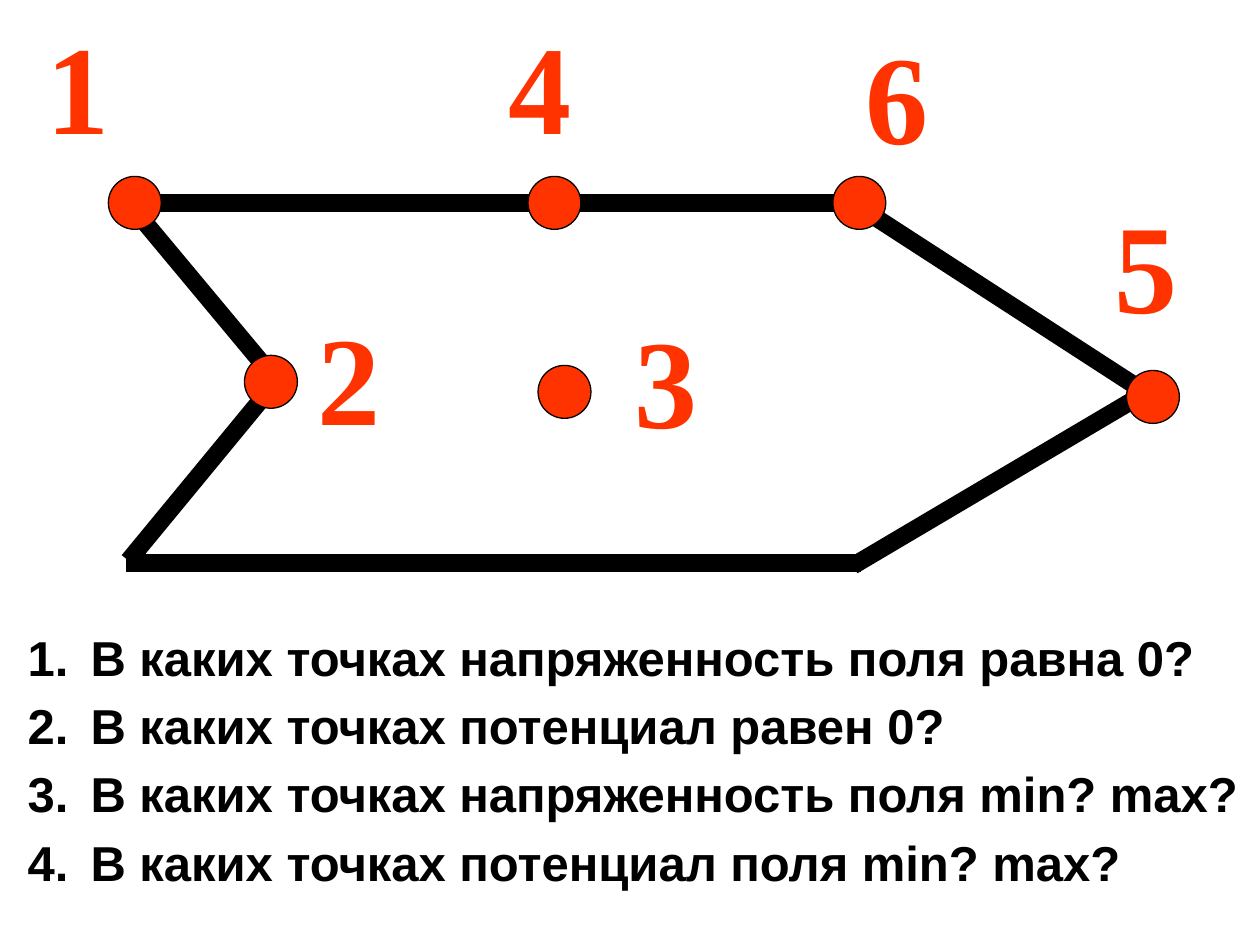
from lxml.etree import SubElement
from pptx import Presentation
from pptx.dml.color import RGBColor
from pptx.enum.shapes import MSO_CONNECTOR, MSO_SHAPE
from pptx.oxml.ns import qn
from pptx.util import Inches, Pt

RED = RGBColor(0xFF, 0x33, 0x00)
BLACK = RGBColor(0x00, 0x00, 0x00)

DOT_SIZE = 0.42
LABEL_SIZE = (1, 1.31)
LABEL_FONT = {"name": "Times New Roman", "size": Pt(72), "bold": True}
QUESTION_FONT = {"name": "Arial", "size": Pt(28), "bold": True}
QUESTION_BOX = (0.12, 4.93, 9.88, 2.72)
QUESTION_INDENT = 0.5
QUESTION_GAP = 5.4

# Start and end of each side of the conductor
SIDES = [
    ((1.02, 1.61), (6.86, 1.61)),
    ((1, 4.47), (6.83, 4.47)),
    ((6.77, 1.61), (9.1, 3.12)),
    ((1.02, 1.61), (2.27, 3.11)),
    ((1.02, 4.45), (2.19, 3.03)),
    ((6.77, 4.49), (9.02, 3.16)),
]

# Number, left top of the dot, left top of the label
POINTS = [
    ("1", (0.86, 1.4), (0.27, 0.02)),
    ("2", (1.94, 2.82), (2.42, 2.33)),
    ("3", (4.27, 2.9), (4.94, 2.35)),
    ("4", (4.19, 1.4), (3.94, 0.02)),
    ("5", (8.94, 2.94), (8.75, 1.44)),
    ("6", (6.61, 1.4), (6.77, 0.1)),
]

QUESTIONS = [
    "В каких точках напряженность поля равна 0?",
    "В каких точках потенциал равен 0?",
    "В каких точках напряженность поля min? max?",
    "В каких точках потенциал поля min? max?",
]


def inches(*values):
    return [Inches(value) for value in values]


def format_font(font, values, color):
    for name, value in values.items():
        setattr(font, name, value)
    font.color.rgb = color


def add_side(slide, start, end):
    side = slide.shapes.add_connector(MSO_CONNECTOR.STRAIGHT, *inches(*start, *end))
    side.line.color.rgb = BLACK
    side.line.width = Pt(10)
    SubElement(side._element.spPr, qn("a:effectLst"))


def add_dot(slide, position):
    dot = slide.shapes.add_shape(
        MSO_SHAPE.OVAL, *inches(*position, DOT_SIZE, DOT_SIZE))
    dot.shadow.inherit = False
    dot.fill.solid()
    dot.fill.fore_color.rgb = RED
    dot.line.color.rgb = BLACK
    dot.line.width = Pt(0.75)


def add_text_frame(slide, box):
    frame = slide.shapes.add_textbox(*inches(*box)).text_frame
    frame.word_wrap = True
    return frame


def add_label(slide, number, position):
    paragraph = add_text_frame(slide, (*position, *LABEL_SIZE)).paragraphs[0]
    paragraph.text = number
    format_font(paragraph.runs[0].font, LABEL_FONT, RED)


def add_questions(slide):
    frame = add_text_frame(slide, QUESTION_BOX)
    for index, question in enumerate(QUESTIONS):
        paragraph = frame.add_paragraph() if index else frame.paragraphs[0]
        paragraph.text = question
        paragraph.space_before = Pt(QUESTION_GAP if index else 0)
        properties = paragraph._p.get_or_add_pPr()
        properties.set("marL", str(Inches(QUESTION_INDENT)))
        properties.set("indent", str(-Inches(QUESTION_INDENT)))
        SubElement(properties, qn("a:buFont"), typeface="+mj-lt")
        SubElement(properties, qn("a:buAutoNum"), type="arabicPeriod")
        format_font(paragraph.runs[0].font, QUESTION_FONT, BLACK)


def main():
    presentation = Presentation()
    presentation.slide_width, presentation.slide_height = inches(10, 7.5)
    slide = presentation.slides.add_slide(
        presentation.slide_layouts.get_by_name("Blank"))
    for start, end in SIDES:
        add_side(slide, start, end)
    for number, dot_position, label_position in POINTS:
        add_dot(slide, dot_position)
        add_label(slide, number, label_position)
    add_questions(slide)
    presentation.save("out.pptx")


if __name__ == "__main__":
    main()
